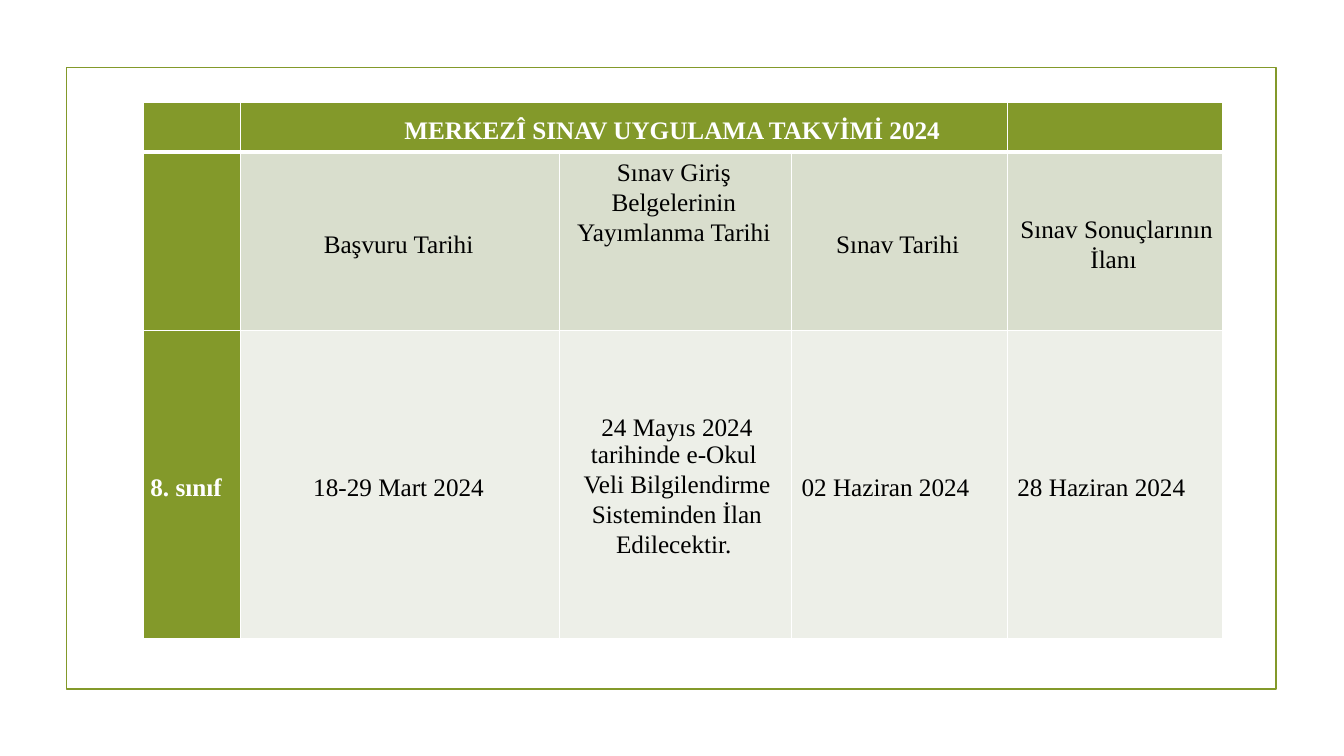
from lxml import etree
from pptx import Presentation
from pptx import util as u
from pptx.dml.color import RGBColor
from pptx.enum import shapes, text
from pptx.oxml.ns import qn

COLORS = {"green": "83992A", "band": "D9DECD", "pale": "EDEFE8",
          "white": "FFFFFF", "black": "000000"}
COLUMNS = [2.46, 8.03, 5.84, 5.44, 5.44]
ROWS = [1.24, 4.5, 7.75]
CALENDAR = [
    ["", "MERKEZÎ SINAV UYGULAMA TAKVİMİ 2024 ", "", "", ""],
    ["", "Başvuru Tarihi ",
     "Sınav Giriş \nBelgelerinin \nYayımlanma Tarihi ",
     "Sınav Tarihi ", "Sınav Sonuçlarının İlanı "],
    ["8. sınıf", "18-29 Mart 2024 ",
     "24 Mayıs 2024 tarihinde e-Okul \n"
     "Veli Bilgilendirme Sisteminden İlan Edilecektir. ",
     "02 Haziran 2024", "28 Haziran 2024"],
]


class Deck:
    font, size, spacing = "Times New Roman", 18, 1.07

    def __init__(self):
        self.prs = Presentation()
        self.prs.slide_width, self.prs.slide_height = u.Cm(33.87), u.Cm(19.05)
        self.s = self.prs.slides.add_slide(self.prs.slide_layouts[6])

    def color(self, name):
        return RGBColor.from_string(COLORS[name])

    def frame(self, x, y, w, h):
        sp = self.s.shapes.add_shape(shapes.MSO_SHAPE.RECTANGLE,
                                     u.Cm(x), u.Cm(y), u.Cm(w), u.Cm(h))
        sp.shadow.inherit = False
        sp.fill.background()
        sp.line.color.rgb = self.color("green")
        sp.line.width = u.Pt(1.25)

    def table(self, x, y, columns, rows):
        shape = self.s.shapes.add_table(len(rows), len(columns), u.Cm(x), u.Cm(y),
                                        u.Cm(sum(columns)), u.Cm(sum(rows)))
        for column, width in zip(shape.table.columns, columns):
            column.width = u.Cm(width)
        for row, height in zip(shape.table.rows, rows):
            row.height = u.Cm(height)
        return shape.table

    def borders(self, cell, **widths):
        tcPr = cell._tc.get_or_add_tcPr()
        for side in "LRTB":
            ln = etree.SubElement(tcPr, qn("a:ln" + side),
                                  w=str(u.Pt(widths.get(side, 1))))
            fill = etree.SubElement(ln, qn("a:solidFill"))
            etree.SubElement(fill, qn("a:srgbClr"), val=COLORS["white"])

    def cell(self, cell, words, fill, ink, bold, centered):
        cell.fill.solid()
        cell.fill.fore_color.rgb = self.color(fill)
        if not words:
            return
        cell.vertical_anchor = text.MSO_ANCHOR.MIDDLE
        cell.margin_left, cell.margin_top = u.Cm(0.18), u.Cm(0.13)
        cell.margin_right, cell.margin_bottom = u.Cm(0.1), 0
        cell.text_frame.text = words
        for p in cell.text_frame.paragraphs:
            p.alignment = text.PP_ALIGN.CENTER if centered else text.PP_ALIGN.LEFT
            p.line_spacing = self.spacing
            for r in p.runs:
                r.font.name, r.font.size, r.font.bold = self.font, u.Pt(self.size), bold
                r.font.color.rgb = self.color(ink)

    def indent(self, cell, cm):
        cell.text_frame.paragraphs[0]._p.get_or_add_pPr().set("marL", str(u.Cm(cm)))


def main():
    deck = Deck()
    deck.frame(1.68, 1.7, 30.48, 15.67)

    # Exam calendar
    table = deck.table(3.61, 2.59, COLUMNS, ROWS)
    for i, row in enumerate(CALENDAR):
        for j, words in enumerate(row):
            cell = table.cell(i, j)
            heading = i == 0 or j == 0
            fill = "green" if heading else ("band" if i == 1 else "pale")
            centered = j > 0 and (i < 2 or j < 3)
            # Thick rule under the header row
            deck.borders(cell, B=3 if i == 0 else 1, T=3 if i == 1 else 1)
            deck.cell(cell, words, fill, "white" if heading else "black",
                      heading, centered)
    table.cell(0, 1).merge(table.cell(0, 3))

    # Exceptions in alignment and spacing
    deck.indent(table.cell(0, 1), 2.51)
    for j in (3, 4):
        deck.indent(table.cell(2, j), 0.08)
    table.cell(1, 2).vertical_anchor = text.MSO_ANCHOR.TOP
    table.cell(2, 2).text_frame.paragraphs[0].line_spacing = 0.97

    deck.prs.save("out.pptx")


if __name__ == "__main__":
    main()
